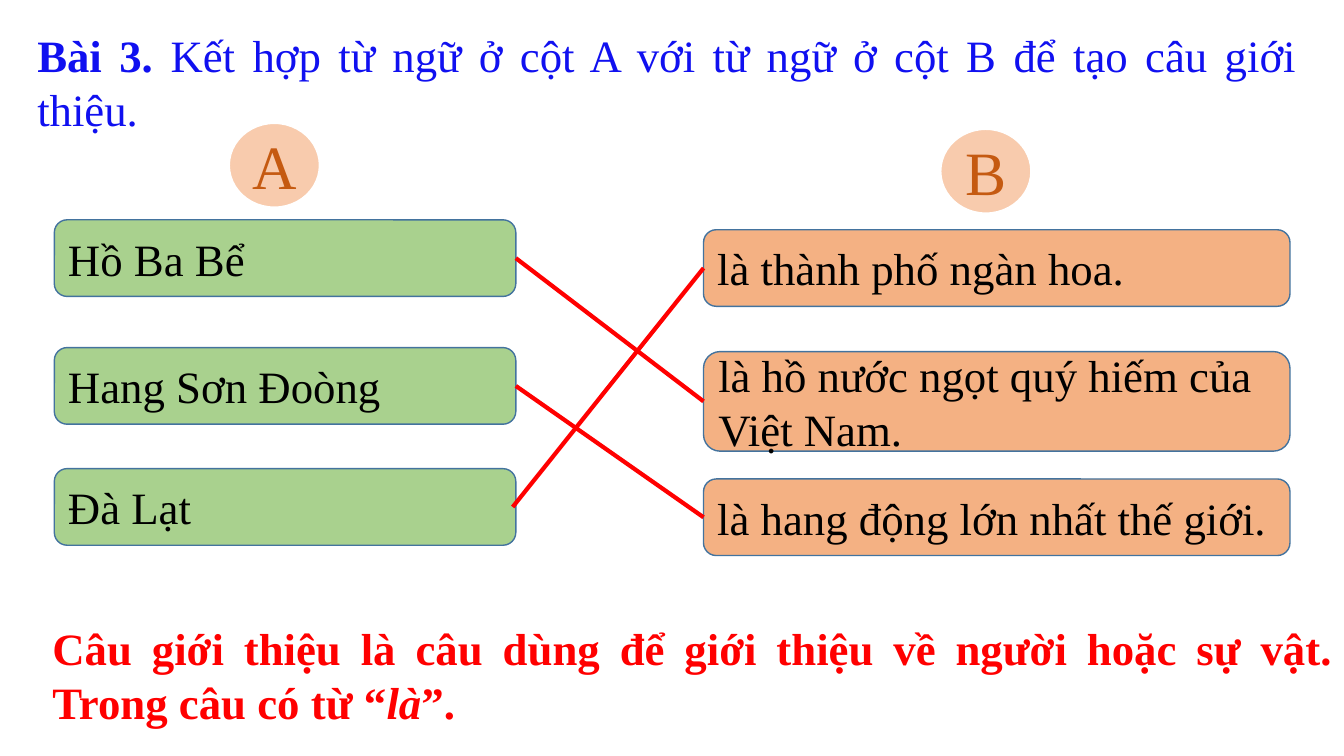
from lxml import etree
from pptx import Presentation
from pptx.dml.color import RGBColor
from pptx.enum.shapes import MSO_CONNECTOR, MSO_SHAPE
from pptx.enum.text import MSO_ANCHOR, MSO_AUTO_SIZE, PP_ALIGN
from pptx.oxml.ns import qn
from pptx.util import Cm, Pt

LEFT, CENTER, JUSTIFY = PP_ALIGN.LEFT, PP_ALIGN.CENTER, PP_ALIGN.JUSTIFY
OVAL, ROUNDED = MSO_SHAPE.OVAL, MSO_SHAPE.ROUNDED_RECTANGLE
FONT = "Times New Roman"

# Content: runs are (text, bold, italic)
TITLE = [
    ("Bài 3. ", True, False),
    ("Kết hợp từ ngữ ở cột A với từ ngữ ở cột B để tạo câu giới thiệu.", False, False),
]
RULE = [
    ("Câu giới thiệu là câu dùng để giới thiệu về người hoặc sự vật. Trong câu có từ “",
     True, False),
    ("là", True, True),
    ("”.", True, False),
]
# Columns in cm: cards are (text, top, height)
COLUMNS = [
    {"letter": "A", "badge": (5.77, 3.1), "left": 1.37, "width": 11.63, "fill": "A9D18E",
     "cards": [("Hồ Ba Bể", 5.54, 1.93),
               ("Hang Sơn Đoòng", 8.76, 1.93),
               ("Đà Lạt", 11.81, 1.93)]},
    {"letter": "B", "badge": (23.7, 3.25), "left": 17.73, "width": 14.78, "fill": "F4B183",
     "cards": [("là thành phố ngàn hoa.", 5.79, 1.93),
               ("là hồ nước ngọt quý hiếm của Việt Nam.", 8.86, 2.51),
               ("là hang động lớn nhất thế giới.", 12.07, 1.93)]},
]
# Answers: card in A, card in B, overlap of the line with card A
MATCHES = [(0, 1, 0), (1, 2, 0), (2, 0, 0.08)]


def color(code):
    return RGBColor.from_string(code)


def write(frame, runs, size, ink, align):
    frame.word_wrap = True
    para = frame.paragraphs[0]
    para.alignment = align
    for text, bold, italic in runs:
        span = para.add_run()
        span.text = text
        font = span.font
        font.name, font.size, font.bold, font.italic = FONT, Pt(size), bold, italic
        font.color.rgb = color(ink)


def add_text(page, area, runs, ink):
    frame = page.shapes.add_textbox(*map(Cm, area)).text_frame
    write(frame, runs, 32, ink, JUSTIFY)
    frame.auto_size = MSO_AUTO_SIZE.SHAPE_TO_FIT_TEXT


def add_label(page, kind, area, text, fill, line, size, ink, align):
    shape = page.shapes.add_shape(kind, *map(Cm, area))
    shape.shadow.inherit = False
    shape.fill.solid()
    shape.fill.fore_color.rgb = color(fill)
    shape.line.color.rgb = color(line[0])
    shape.line.width = Pt(line[1])
    shape.text_frame.vertical_anchor = MSO_ANCHOR.MIDDLE
    write(shape.text_frame, [(text, False, False)], size, ink, align)


def add_match(page, *ends):
    line = page.shapes.add_connector(MSO_CONNECTOR.STRAIGHT, *map(Cm, ends))
    line.line.color.rgb = color("FF0000")
    line.line.width = Pt(3)
    etree.SubElement(line._element.spPr, qn("a:effectLst"))


def middle(column, index):
    text, top, height = column["cards"][index]
    return top + height / 2


def main():
    deck = Presentation()
    deck.slide_width, deck.slide_height = Cm(33.87), Cm(19.05)
    page = deck.slides.add_slide(deck.slide_layouts[6])

    # Heading
    add_text(page, (0.69, 0.58, 32.26, 1.63), TITLE, "1010F0")

    # Column letters and cards
    for column in COLUMNS:
        add_label(page, OVAL, (*column["badge"], 2.29, 2.13), column["letter"],
                  "F8CBAD", ("FFFFFF", 1.5), 44, "C55A11", CENTER)
        for text, top, height in column["cards"]:
            add_label(page, ROUNDED, (column["left"], top, column["width"], height), text,
                      column["fill"], ("43739E", 1), 32, "000000", LEFT)

    # Matching lines
    first, second = COLUMNS
    edge = first["left"] + first["width"]
    for start, end, overlap in MATCHES:
        add_match(page, edge - overlap, middle(first, start),
                  second["left"], middle(second, end))

    # Rule to remember
    add_text(page, (1.07, 15.52, 32.79, 3), RULE, "FF0000")

    deck.save("out.pptx")


if __name__ == "__main__":
    main()
